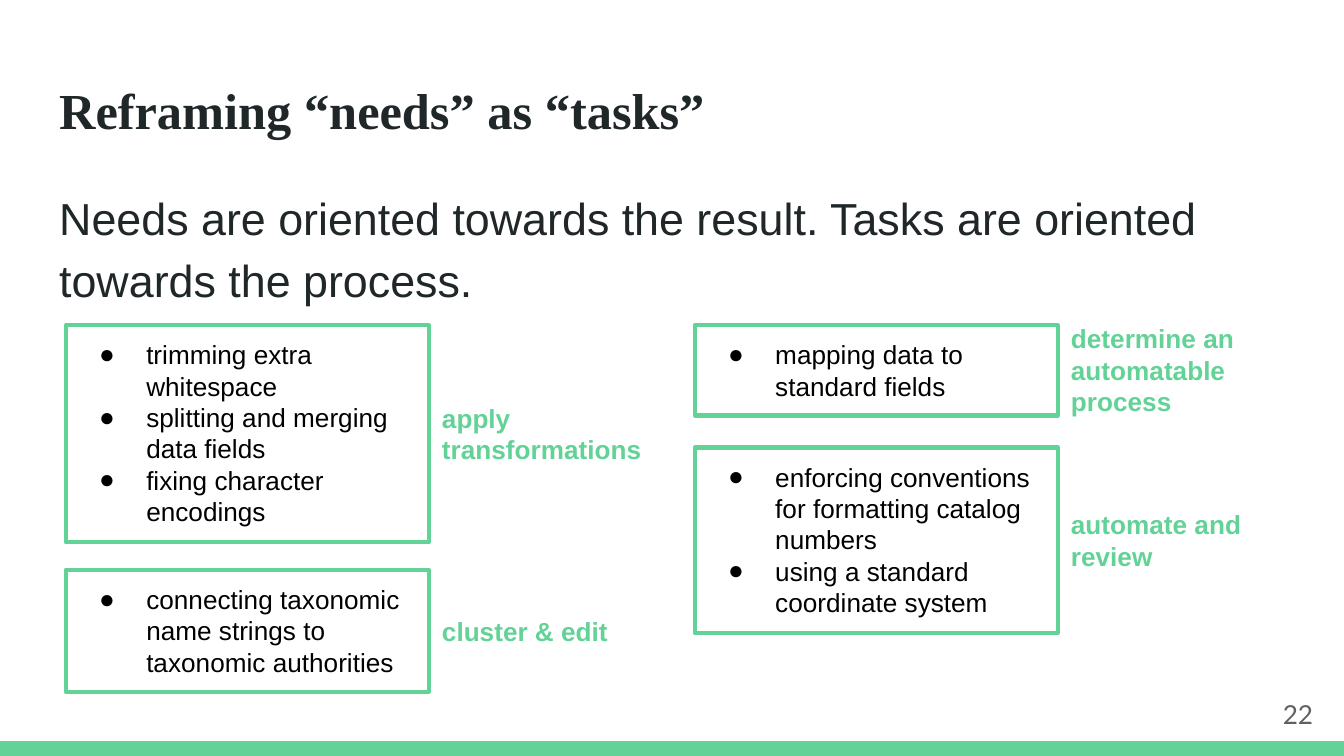
from lxml.etree import SubElement
from pptx import Presentation
from pptx.dml.color import RGBColor
from pptx.enum.shapes import MSO_SHAPE
from pptx.enum.text import MSO_ANCHOR, MSO_AUTO_SIZE, PP_ALIGN
from pptx.oxml.ns import qn
from pptx.util import Inches, Pt

GREEN = RGBColor(0x63, 0xD2, 0x97)
INK = RGBColor(0x20, 0x27, 0x29)
GRAY = RGBColor(0x61, 0x61, 0x61)
BLACK = RGBColor(0, 0, 0)

WIDTH = 10
HEIGHT = WIDTH * 9 / 16
MARGIN = 0.34
INSET = 0.1
LINE = 0.236  # height of one line of 14 pt text
BOX_LEFT = (0.49, 5.17)
BOX_WIDTH = 2.7
BAND = 0.11


def format_text(shape, size, color, font="Arial", bold=False, anchor=MSO_ANCHOR.TOP):
    tf = shape.text_frame
    tf.word_wrap = True
    tf.auto_size = MSO_AUTO_SIZE.NONE
    tf.vertical_anchor = anchor
    tf.margin_left = tf.margin_right = Inches(INSET)
    tf.margin_top = tf.margin_bottom = Inches(INSET)
    for p in tf.paragraphs:
        p.alignment = PP_ALIGN.LEFT
        p.space_before = Pt(0)
        for r in p.runs:
            r.font.size = Pt(size)
            r.font.name = font
            r.font.bold = bold
            r.font.color.rgb = color


def set_bullet(p, char=None, left=0, indent=0):
    pPr = p._p.get_or_add_pPr()
    pPr.set("marL", str(Inches(left)))
    pPr.set("indent", str(Inches(indent)))
    if char:
        SubElement(SubElement(pPr, qn("a:buClr")), qn("a:srgbClr"), val=str(BLACK))
        SubElement(pPr, qn("a:buSzPts"), val="1400")
        SubElement(pPr, qn("a:buFont"), typeface="Arial")
        SubElement(pPr, qn("a:buChar"), char=char)
    else:
        SubElement(pPr, qn("a:buNone"))


prs = Presentation()
prs.slide_width, prs.slide_height = Inches(WIDTH), Inches(HEIGHT)
s = prs.slides.add_slide(prs.slide_layouts[1])

# Green band along the bottom edge
band = s.shapes.add_shape(MSO_SHAPE.RECTANGLE, 0, Inches(HEIGHT - BAND),
                          Inches(WIDTH), Inches(BAND))
band.shadow.inherit = False
band.fill.solid()
band.fill.fore_color.rgb = GREEN
band.line.fill.background()

# Title and statement
title, body = s.shapes.title, s.placeholders[1]
for sp, top, height in ((title, 0.49, 0.63), (body, 1.26, 1.15)):
    sp.left, sp.top = Inches(MARGIN), Inches(top)
    sp.width, sp.height = Inches(WIDTH - 2 * MARGIN), Inches(height)
title.text_frame.text = "Reframing “needs” as “tasks”"
format_text(title, 27, INK, font="Times New Roman", bold=True)
body.text_frame.text = ("Needs are oriented towards the result. "
                        "Tasks are oriented towards the process.")
format_text(body, 24, INK)
p = body.text_frame.paragraphs[0]
p.line_spacing = 1.15
p.space_after = Pt(12)
set_bullet(p)

# Needs in boxes, each with its task beside it:
# column, top, lines in box, needs, task, lines in task, task width
groups = [
    (0, 2.42, 6, ["trimming extra whitespace", "splitting and merging data fields",
                  "fixing character encodings"], "apply transformations", 2, 1.92),
    (0, 4.24, 3, ["connecting taxonomic name strings to taxonomic authorities"],
     "cluster & edit", 1, 1.92),
    (1, 2.42, 2, ["mapping data to standard fields"],
     "determine an automatable process", 3, 1.92),
    (1, 3.33, 5, ["enforcing conventions for formatting catalog numbers",
                  "using a standard coordinate system"], "automate and review", 2, 1.53),
]
for column, top, box_lines, needs, task, task_lines, task_width in groups:
    left = BOX_LEFT[column]
    box_height = 2 * INSET + box_lines * LINE
    box = s.shapes.add_shape(MSO_SHAPE.RECTANGLE, Inches(left), Inches(top),
                             Inches(BOX_WIDTH), Inches(box_height))
    box.shadow.inherit = False
    box.fill.background()
    box.line.color.rgb = GREEN
    box.line.width = Pt(2.25)
    box.text_frame.text = "\n".join(needs)
    format_text(box, 14, BLACK)
    for p in box.text_frame.paragraphs:
        set_bullet(p, "●", 0.5, -0.35)

    task_height = 2 * INSET + task_lines * LINE
    label = s.shapes.add_textbox(Inches(left + BOX_WIDTH),
                                 Inches(top + (box_height - task_height) / 2),
                                 Inches(task_width), Inches(task_height))
    label.text_frame.text = task
    format_text(label, 14, GREEN, bold=True)

# Slide number
number = s.shapes.add_textbox(Inches(9.27), Inches(5.1), Inches(0.6), Inches(0.43))
number.text_frame.text = "22"
format_text(number, 14, GRAY, font="Lato", anchor=MSO_ANCHOR.MIDDLE)
number.text_frame.paragraphs[0].alignment = PP_ALIGN.RIGHT

prs.save("out.pptx")
